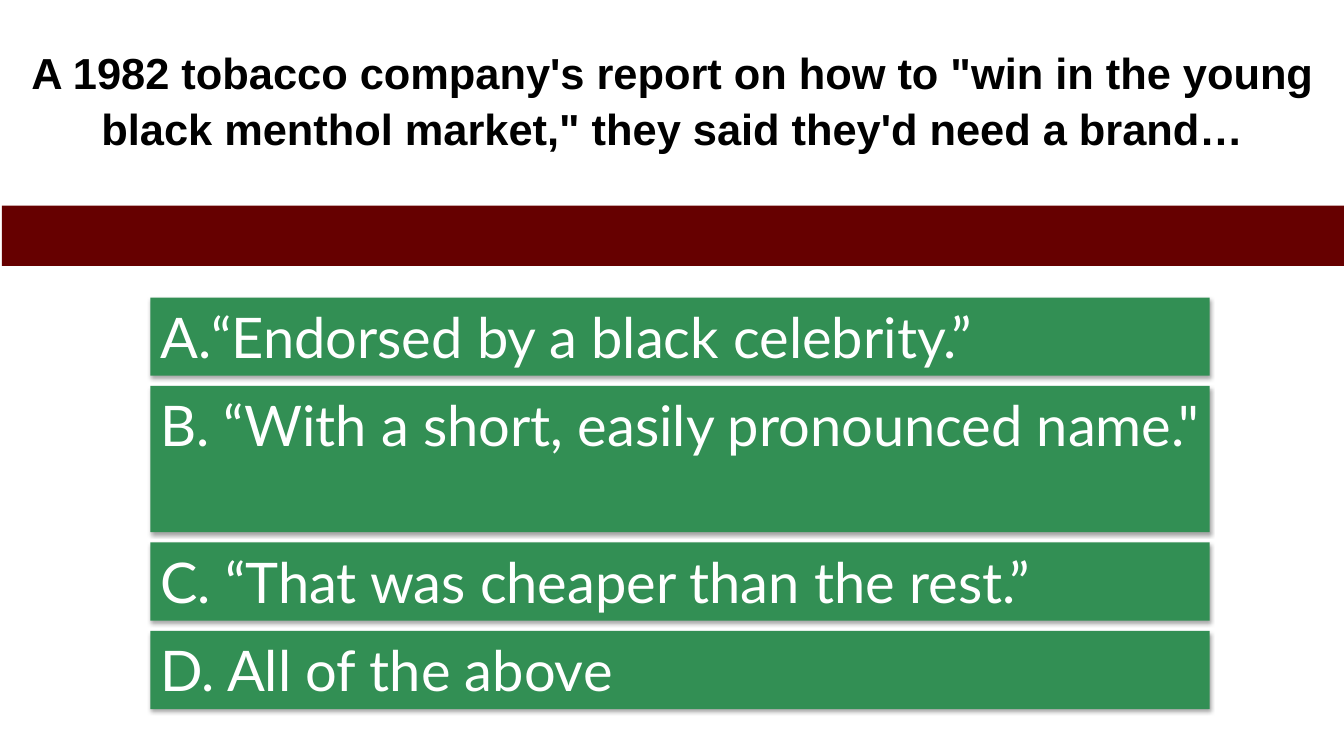
from dataclasses import dataclass

from lxml import etree
from pptx import Presentation
from pptx import util as u
from pptx.dml.color import RGBColor
from pptx.enum import shapes, text
from pptx.oxml import ns

Pt = u.Pt


@dataclass(frozen=True)
class Theme:
    ink: str = "000000"
    band: str = "660000"
    answer: str = "328F54"
    answer_ink: str = "FFFFFF"
    question_font: str = "Arial"
    answer_font: str = "Lato"
    question_size: float = 31
    answer_size: float = 40


THEME = Theme()
WIDTH, HEIGHT = 960, 540


def put_text(sp, content, *, font, size, color, bold=False,
             align=text.PP_ALIGN.LEFT, line_spacing=1.0):
    tf = sp.text_frame
    tf.word_wrap = True
    tf.vertical_anchor = text.MSO_ANCHOR.TOP
    p = tf.paragraphs[0]
    p.alignment = align
    p.line_spacing = line_spacing
    r = p.add_run()
    r.text = content
    r.font.name, r.font.size, r.font.bold = font, Pt(size), bold
    r.font.color.rgb = RGBColor.from_string(color)
    return p


def add_bar(s, box, color):
    sp = s.shapes.add_shape(shapes.MSO_SHAPE.RECTANGLE, *map(Pt, box))
    sp.shadow.inherit = False
    sp.fill.solid()
    sp.fill.fore_color.rgb = RGBColor.from_string(color)
    sp.line.fill.background()
    return sp


def add_soft_shadow(sp):
    effects = sp._element.spPr.find(ns.qn("a:effectLst"))
    shadow = etree.SubElement(effects, ns.qn("a:outerShdw"), blurRad=str(Pt(3.1)),
                              dist=str(Pt(1.8)), dir="5400000", rotWithShape="0")
    color = etree.SubElement(shadow, ns.qn("a:srgbClr"), val="000000")
    etree.SubElement(color, ns.qn("a:alpha"), val="35000")


def number_with_letter(p, indent):
    pPr = p._p.get_or_add_pPr()
    pPr.set("marL", str(Pt(indent)))
    pPr.set("indent", str(-Pt(indent)))
    etree.SubElement(pPr, ns.qn("a:buFontTx"))
    etree.SubElement(pPr, ns.qn("a:buAutoNum"), type="alphaUcPeriod")


def add_question(s, box, content):
    sp = s.shapes.add_textbox(*map(Pt, box))
    put_text(sp, content, font=THEME.question_font, size=THEME.question_size,
             color=THEME.ink, bold=True, align=text.PP_ALIGN.CENTER,
             line_spacing=1.06)


def add_answers(s, box, answers, gap):
    """Stack the answers; each takes a share of the height by its row count."""
    left, top, width, height = box
    row = 55.8
    # Rows beyond the first share whatever height is left over
    extra_rows = sum(rows - 1 for _, rows, _ in answers)
    spare = height - len(answers) * row - (len(answers) - 1) * gap
    for content, rows, lettered in answers:
        bar_height = row + (rows - 1) * spare / extra_rows
        sp = add_bar(s, (left, top, width, bar_height), THEME.answer)
        add_soft_shadow(sp)
        p = put_text(sp, content, font=THEME.answer_font,
                     size=THEME.answer_size, color=THEME.answer_ink)
        if lettered:
            number_with_letter(p, 27)
        top += bar_height + gap


def main():
    prs = Presentation()
    prs.slide_width, prs.slide_height = Pt(WIDTH), Pt(HEIGHT)
    s = prs.slides.add_slide(prs.slide_layouts[6])

    # Question
    add_question(s, (0, 27.4, WIDTH, 110),
                 "A 1982 tobacco company's report on how to \"win in the young "
                 "black menthol market,\" they said they'd need a brand…")

    # Dividing band
    add_bar(s, (1.4, 146.9, WIDTH, 43), THEME.band)

    # Answers: text, rows, automatic letter
    add_answers(s, (107.4, 212.5, 756.7, 294), [
        ("“Endorsed by a black celebrity.”", 1, True),
        ("B. “With a short, easily pronounced name.\"", 2, False),
        ("C. “That was cheaper than the rest.”", 1, False),
        ("D. All of the above", 1, False),
    ], gap=7.4)

    prs.save("out.pptx")


if __name__ == "__main__":
    main()
